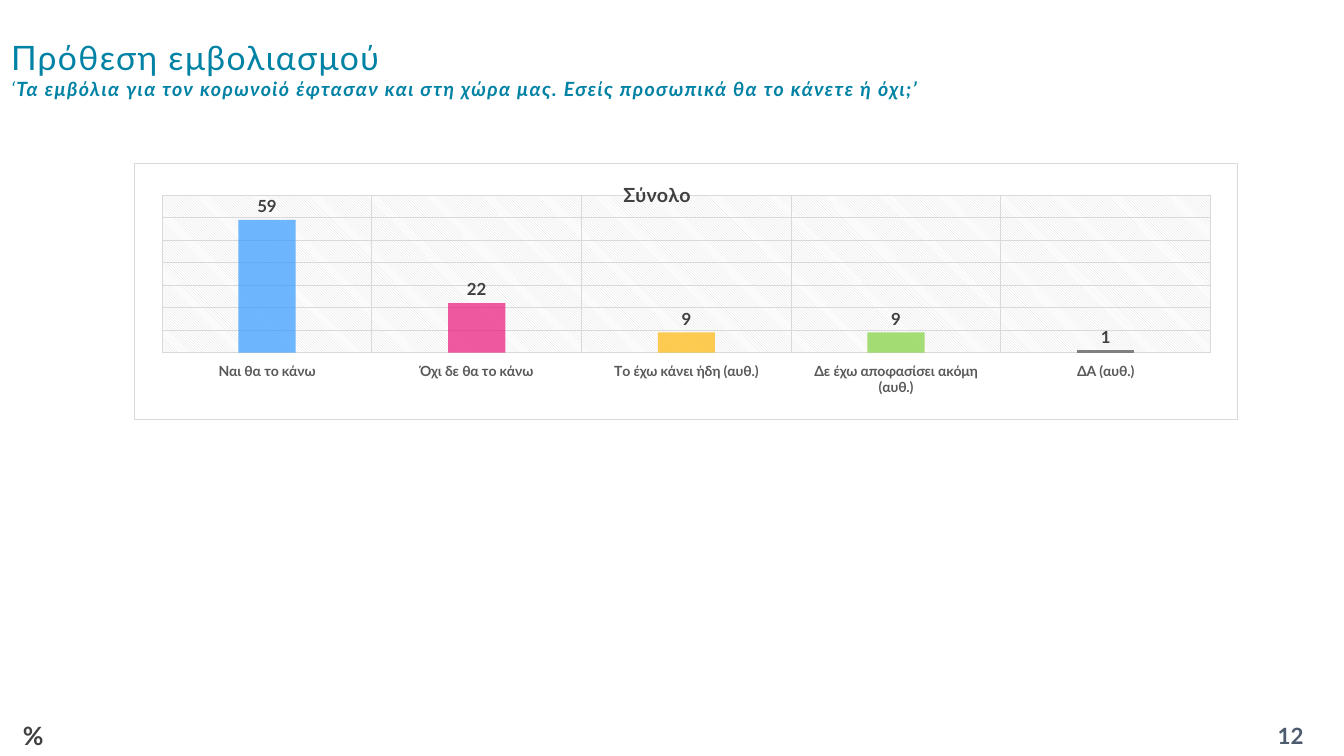
"""Build a slide showing vaccination intention as a column chart."""

from lxml import etree
from pptx import Presentation
from pptx.chart.data import CategoryChartData
from pptx.dml.color import RGBColor
from pptx.enum.chart import XL_CHART_TYPE as ChartType
from pptx.enum.chart import XL_LABEL_POSITION as LabelPosition
from pptx.enum.chart import XL_TICK_LABEL_POSITION as TickLabelPosition
from pptx.enum.chart import XL_TICK_MARK as TickMark
from pptx.enum.text import MSO_ANCHOR as Anchor
from pptx.enum.text import PP_ALIGN as Align
from pptx.oxml import parse_xml
from pptx.oxml.ns import qn
from pptx.util import Cm, Pt

FONT = "Lato"
TEAL = RGBColor(0x00, 0x82, 0xA5)
SLATE = RGBColor(0x4E, 0x5B, 0x6F)
DARK = RGBColor(0x40, 0x40, 0x40)
GRAY = RGBColor(0x59, 0x59, 0x59)
MID_GRAY = RGBColor(0x80, 0x80, 0x80)
LIGHT = RGBColor(0xD9, 0xD9, 0xD9)
BLUE = RGBColor(0x33, 0x99, 0xFF)
PINK = RGBColor(0xEA, 0x15, 0x7A)
AMBER = RGBColor(0xFE, 0xB8, 0x0A)
GREEN = RGBColor(0x7F, 0xD1, 0x3B)

TITLE = "Πρόθεση εμβολιασμού"
QUESTION = "Τα εμβόλια για τον κορωνοϊό έφτασαν και στη χώρα μας. Εσείς προσωπικά θα το κάνετε ή όχι;’"
CHART_TITLE = "Σύνολο"
ANSWERS = [
    ("Ναι θα το κάνω", 59, BLUE, 70),
    ("Όχι δε θα το κάνω", 22, PINK, 70),
    ("Το έχω κάνει ήδη (αυθ.)", 9, AMBER, 70),
    ("Δε έχω αποφασίσει ακόμη (αυθ.)", 9, GREEN, 70),
    ("ΔΑ (αυθ.)", 1, MID_GRAY, 100),
]
PLOT_LAYOUT = {"layoutTarget": "inner", "xMode": "edge", "yMode": "edge",
               "x": 0.025, "y": 0.123, "w": 0.951, "h": 0.615}
TITLE_LAYOUT = {"xMode": "edge", "yMode": "edge", "x": 0.44, "y": 0.05}

NAMESPACES = ('xmlns:c="http://schemas.openxmlformats.org/drawingml/2006/chart" '
              'xmlns:a="http://schemas.openxmlformats.org/drawingml/2006/main"')
CHART_FORMAT = f"""<c:spPr {NAMESPACES}>
  <a:solidFill><a:srgbClr val="FFFFFF"/></a:solidFill>
  <a:ln w="9525"><a:solidFill><a:srgbClr val="{LIGHT}"/></a:solidFill></a:ln>
</c:spPr>"""
PLOT_FORMAT = f"""<c:spPr {NAMESPACES}>
  <a:pattFill prst="ltDnDiag">
    <a:fgClr><a:srgbClr val="{LIGHT}"/></a:fgClr>
    <a:bgClr><a:srgbClr val="FFFFFF"/></a:bgClr>
  </a:pattFill>
  <a:ln><a:noFill/></a:ln>
</c:spPr>"""


def style_font(font, size, color, bold=False, italic=False):
    font.name, font.size, font.bold, font.italic = FONT, Pt(size), bold, italic
    font.color.rgb = color


def add_text(slide, box, lines, anchor=Anchor.MIDDLE, align=Align.LEFT, spacing=0):
    """Add a text box; each line is a list of (text, size, color, bold, italic)."""
    frame = slide.shapes.add_textbox(*map(Cm, box)).text_frame
    frame.word_wrap = True
    frame.vertical_anchor = anchor
    for index, line in enumerate(lines):
        paragraph = frame.add_paragraph() if index else frame.paragraphs[0]
        paragraph.alignment = align
        for text, *style in line:
            run = paragraph.add_run()
            run.text = text
            style_font(run.font, *style)
            if spacing:
                run.font._element.set("spc", str(spacing))


def set_layout(element, values):
    layout = element.find(qn("c:layout"))
    if layout is None:
        layout = etree.Element(qn("c:layout"))
        element.insert(0, layout)
    manual = etree.SubElement(layout, qn("c:manualLayout"))
    for name, value in values.items():
        etree.SubElement(manual, qn(f"c:{name}")).set("val", str(value))


def style_line(line):
    line.color.rgb = LIGHT
    line.width = Pt(0.75)


def style_axes(chart):
    category_axis, value_axis = chart.category_axis, chart.value_axis
    for axis in (category_axis, value_axis):
        axis.has_major_gridlines = True
        style_line(axis.major_gridlines.format.line)
    category_axis.major_tick_mark = TickMark.NONE
    category_axis.tick_label_position = TickLabelPosition.LOW
    style_line(category_axis.format.line)
    style_font(category_axis.tick_labels.font, 10, GRAY, bold=True)
    value_axis.minimum_scale, value_axis.maximum_scale = 0, 70
    value_axis.major_unit = 10
    value_axis.visible = False


def style_columns(plot):
    plot.gap_width, plot.overlap = 267, -43
    plot.vary_by_categories = False
    series = plot.series[0]
    for index, (_, _, color, opacity) in enumerate(ANSWERS):
        fill = series.points[index].format.fill
        fill.solid()
        fill.fore_color.rgb = color
        if opacity < 100:
            rgb = series.points[index].format._element.find(".//" + qn("a:srgbClr"))
            etree.SubElement(rgb, qn("a:alpha")).set("val", str(opacity * 1000))
    plot.has_data_labels = True
    labels = plot.data_labels
    labels.show_value = True
    labels.number_format, labels.number_format_is_linked = "0", False
    labels.position = LabelPosition.OUTSIDE_END
    style_font(labels.font, 12, DARK, bold=True)


def add_answer_chart(slide):
    data = CategoryChartData(number_format="0")
    data.categories = [answer[0] for answer in ANSWERS]
    data.add_series(CHART_TITLE, [answer[1] for answer in ANSWERS])
    box = map(Cm, (3.38, 4.11, 27.81, 6.48))
    chart = slide.shapes.add_chart(ChartType.COLUMN_CLUSTERED, *box, data).chart
    chart.has_legend = False
    style_font(chart.font, 10, GRAY)
    chart.has_title = True
    paragraph = chart.chart_title.text_frame.paragraphs[0]
    paragraph.text = CHART_TITLE
    style_font(paragraph.font, 14, DARK, bold=True)
    style_axes(chart)
    style_columns(chart.plots[0])
    chart_part = chart._chartSpace.find(qn("c:chart"))
    chart_part.addnext(parse_xml(CHART_FORMAT))
    plot_area = chart_part.find(qn("c:plotArea"))
    plot_area.append(parse_xml(PLOT_FORMAT))
    set_layout(plot_area, PLOT_LAYOUT)
    set_layout(chart_part.find(qn("c:title")), TITLE_LAYOUT)


def main():
    presentation = Presentation()
    presentation.slide_width, presentation.slide_height = Cm(33.87), Cm(19.05)
    slide = presentation.slides.add_slide(presentation.slide_layouts[6])
    heading = [
        [(TITLE, 24, TEAL)],
        [("‘", 14, TEAL, False, True), (QUESTION, 14, TEAL, True, True)],
    ]
    add_text(slide, (0.03, 0.23, 25.2, 3), heading, spacing=100)
    add_text(slide, (31.19, 18.03, 2.67, 1.02), [[("12", 16, SLATE, True)]], align=Align.CENTER)
    add_text(slide, (0.33, 18.03, 1.8, 1.02), [[("%", 18, DARK, True)]], anchor=Anchor.TOP)
    add_answer_chart(slide)
    presentation.save("out.pptx")


if __name__ == "__main__":
    main()
